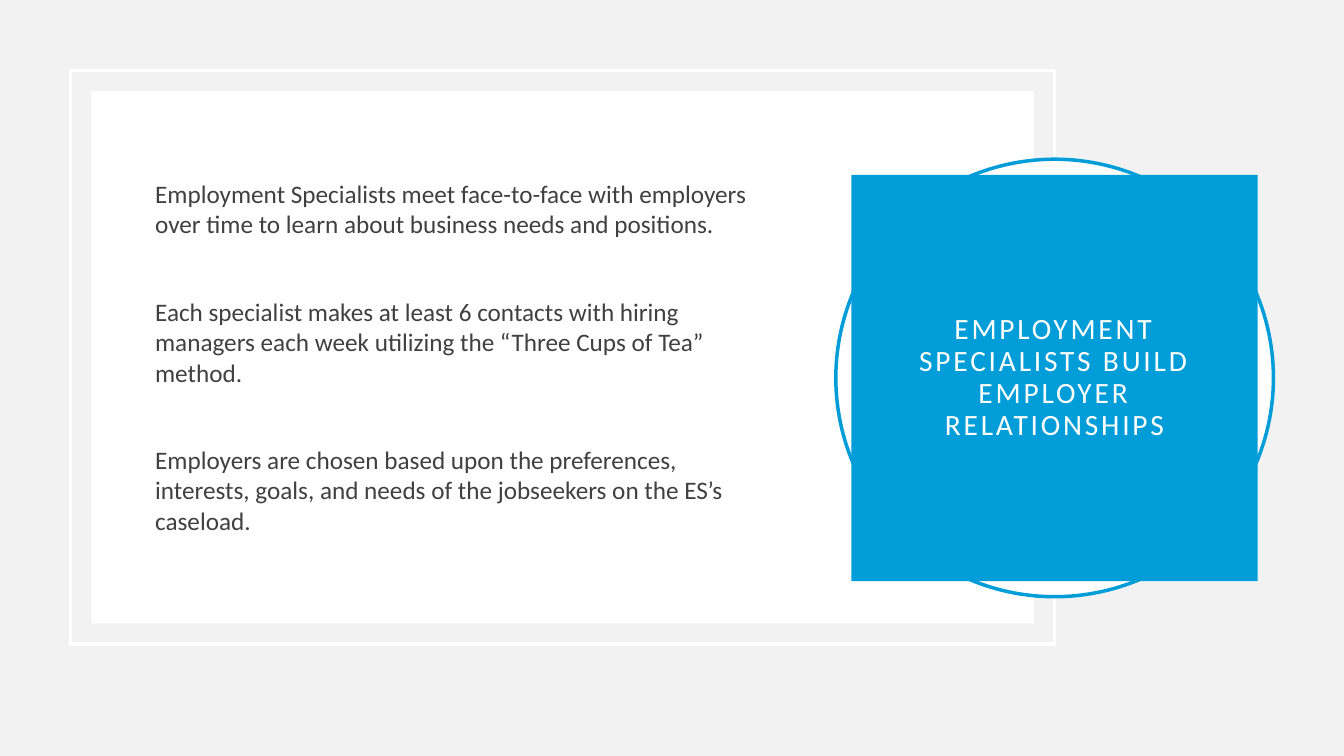
from pptx import Presentation
from pptx.dml.color import RGBColor
from pptx.enum.shapes import MSO_SHAPE
from pptx.enum.text import MSO_ANCHOR, MSO_AUTO_SIZE, PP_ALIGN
from pptx.util import Inches, Pt

POINTS = [
    "Employment Specialists meet face-to-face with employers over time to learn "
    "about business needs and positions.",
    "Each specialist makes at least 6 contacts with hiring managers each week "
    "utilizing the “Three Cups of Tea” method.",
    "Employers are chosen based upon the preferences, interests, goals, and needs "
    "of the jobseekers on the ES’s caseload.",
]
TITLE = "EMPLOYMENT SPECIALISTS BUILD EMPLOYER RELATIONSHIPS"
BLUE, WHITE, GREY, DARK = "009DD9", "FFFFFF", "F2F2F2", "404040"


def color(hex_code):
    """Turn a hex string into a colour."""
    return RGBColor.from_string(hex_code)


def add_panel(s, kind, x, y, w, h, fill=None, line=None):
    """Add a flat shape with an optional fill and outline."""
    sp = s.shapes.add_shape(kind, Inches(x), Inches(y), Inches(w), Inches(h))
    sp.shadow.inherit = False
    if fill:
        sp.fill.solid()
        sp.fill.fore_color.rgb = color(fill)
    else:
        sp.fill.background()
    if line:
        sp.line.color.rgb = color(line)
        sp.line.width = Pt(2.5)
    else:
        sp.line.fill.background()
    return sp


def style_paragraph(p, size, hex_code):
    """Set the font of a whole paragraph."""
    p.font.name = "Calibri"
    p.font.size = Pt(size)
    p.font.color.rgb = color(hex_code)


def add_framed_text(s, x, y, w, h):
    """Add the outlined white card and its paragraphs."""
    gap = 0.205
    add_panel(s, MSO_SHAPE.RECTANGLE, x, y, w, h, line=WHITE)
    add_panel(s, MSO_SHAPE.RECTANGLE, x + gap, y + gap, w - 2 * gap, h - 2 * gap, fill=WHITE)
    box = s.shapes.add_textbox(Inches(x + 0.74), Inches(y + 0.7), Inches(6.25), Inches(h - 1.41))
    tf = box.text_frame
    tf.word_wrap = True
    tf.vertical_anchor = MSO_ANCHOR.MIDDLE
    for i, text in enumerate(POINTS):
        p = tf.add_paragraph() if i else tf.paragraphs[0]
        p.text = text
        p.space_before = Pt(41 if i else 0)
        style_paragraph(p, 18, DARK)


def add_title_badge(s, x, y, size):
    """Add the ring and set the title as a blue square centred on it."""
    add_panel(s, MSO_SHAPE.OVAL, x, y, size, size, fill=WHITE, line=BLUE)
    inset = 0.155
    title = s.shapes.title
    title.left, title.top = Inches(x + inset), Inches(y + inset)
    title.width = title.height = Inches(size - 2 * inset)
    title.fill.solid()
    title.fill.fore_color.rgb = color(BLUE)
    s.shapes._spTree.append(title._element)
    tf = title.text_frame
    tf.text = TITLE
    tf.word_wrap = True
    tf.auto_size = MSO_AUTO_SIZE.NONE
    tf.vertical_anchor = MSO_ANCHOR.MIDDLE
    tf.margin_left = tf.margin_right = tf.margin_top = tf.margin_bottom = Inches(0.2)
    p = tf.paragraphs[0]
    p.alignment = PP_ALIGN.CENTER
    p.line_spacing = 0.9
    style_paragraph(p, 21, WHITE)
    p.runs[0].font._element.set("spc", "200")


def main():
    """Build and save the slide."""
    prs = Presentation()
    prs.slide_width, prs.slide_height = Inches(13.33), Inches(7.5)
    s = prs.slides.add_slide(prs.slide_layouts[5])
    s.background.fill.solid()
    s.background.fill.fore_color.rgb = color(GREY)
    add_framed_text(s, 0.7, 0.7, 9.76, 5.69)
    add_title_badge(s, 8.29, 1.58, 4.34)
    prs.save("out.pptx")


if __name__ == "__main__":
    main()
